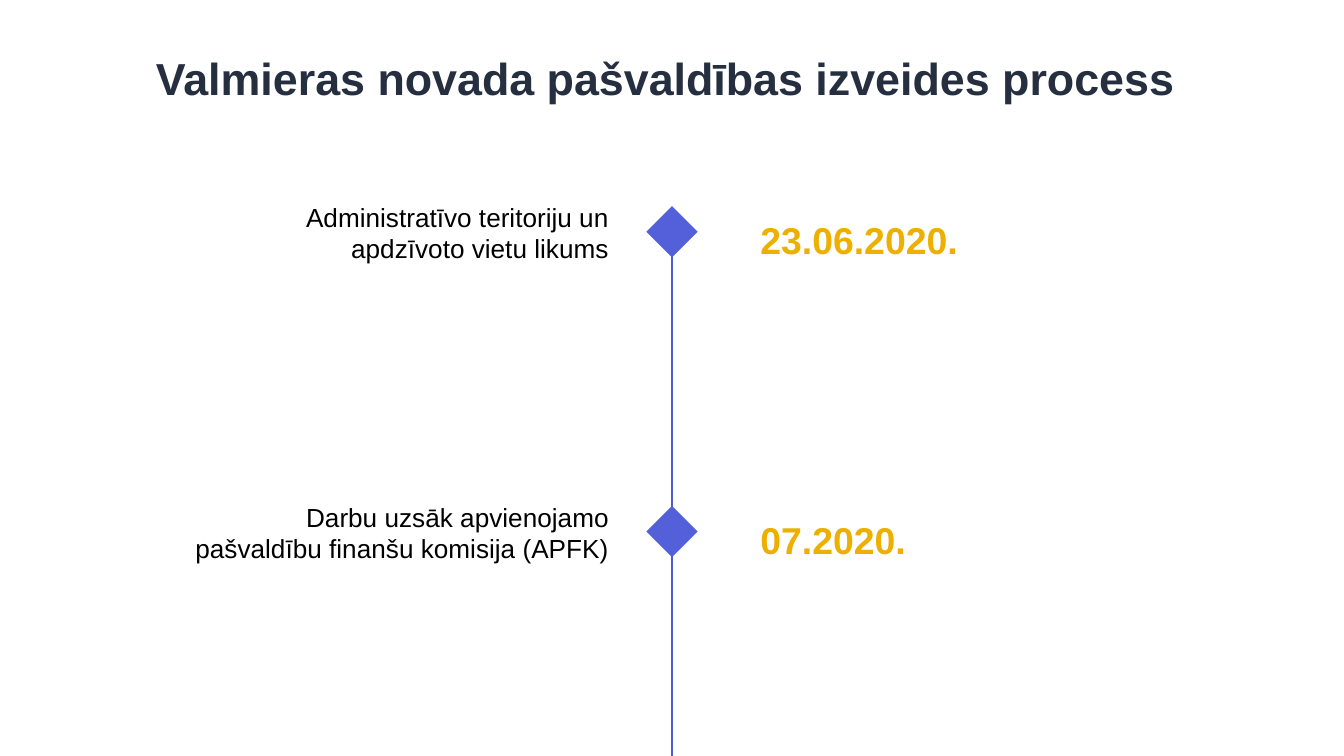
from pptx import Presentation
from pptx.dml.color import RGBColor
from pptx.enum.shapes import MSO_CONNECTOR, MSO_SHAPE
from pptx.enum.text import MSO_ANCHOR, MSO_AUTO_SIZE, PP_ALIGN
from pptx.oxml.ns import qn
from pptx.util import Inches, Pt
from lxml import etree

STRAIGHT = MSO_CONNECTOR.STRAIGHT
RECTANGLE = MSO_SHAPE.RECTANGLE
TOP, MIDDLE = MSO_ANCHOR.TOP, MSO_ANCHOR.MIDDLE
LEFT, RIGHT = PP_ALIGN.LEFT, PP_ALIGN.RIGHT
FIXED = MSO_AUTO_SIZE.NONE

WIDTH = 10
HEIGHT = WIDTH * 9 / 16
AXIS = WIDTH / 2
FIRST_ROW, ROW_HEIGHT = 1.45, 2.23
MARKER_SIZE = 0.27
COLORS = {"title": "252F40", "body": "000000", "date": "EDB000",
          "marker": "5360D9", "line": "4E5BD7"}
FORMATS = {
    "title": {"size": Pt(24), "bold": True},
    "body": {"size": Pt(14), "bold": False},
    "date": {"size": Pt(20), "bold": True},
}
EVENTS = [
    ("Administratīvo teritoriju un apdzīvoto vietu likums", "23.06.2020.", 2.67),
    ("Darbu uzsāk apvienojamo pašvaldību finanšu komisija (APFK)", "07.2020.", 3.41),
]


def color(role):
    """Return the colour of a role."""
    return RGBColor.from_string(COLORS[role])


def write(shape, text, role, alignment=LEFT, anchor=TOP):
    """Fill a shape with one formatted paragraph."""
    frame = shape.text_frame
    frame.text = text
    settings = {"word_wrap": True, "auto_size": FIXED, "vertical_anchor": anchor}
    for name, value in settings.items():
        setattr(frame, name, value)
    paragraph = frame.paragraphs[0]
    paragraph.alignment = alignment
    font = paragraph.runs[0].font
    for name, value in {"name": "Arial", **FORMATS[role]}.items():
        setattr(font, name, value)
    font.color.rgb = color(role)


def place_title(slide, box, text):
    """Move the title placeholder into the box and write it."""
    title = slide.shapes.title
    for name, value in zip(("left", "top", "width", "height"), box):
        setattr(title, name, Inches(value))
    write(title, text, "title", anchor=MIDDLE)


def add_axis(slide, top, bottom):
    """Draw the vertical line of the timeline."""
    line = slide.shapes.add_connector(
        STRAIGHT, *map(Inches, (AXIS, top, AXIS, bottom)))
    line.line.color.rgb = color("line")
    line.line.width = Pt(1.5)
    etree.SubElement(line._element.spPr, qn("a:effectLst"))


def add_event(slide, top, text, date, text_width):
    """Place the marker, description and date of one timeline row."""
    marker = slide.shapes.add_shape(RECTANGLE, *map(Inches, (
        AXIS - MARKER_SIZE / 2, top + 0.14, MARKER_SIZE, MARKER_SIZE)))
    marker.rotation = 45
    marker.shadow.inherit = False
    marker.fill.solid()
    marker.fill.fore_color.rgb = color("marker")
    marker.line.fill.background()

    text_right = AXIS - 0.37
    description = slide.shapes.add_textbox(*map(Inches, (
        text_right - text_width, top, text_width, 0.57)))
    write(description, text, "body", RIGHT)
    date_box = slide.shapes.add_textbox(*map(Inches, (
        AXIS + 0.56, top + 0.12, 2.67, 0.44)))
    write(date_box, date, "date")


def main():
    """Build the timeline slide."""
    presentation = Presentation()
    presentation.slide_width = Inches(WIDTH)
    presentation.slide_height = Inches(HEIGHT)
    slide = presentation.slides.add_slide(presentation.slide_layouts[5])
    place_title(slide, (1.06, 0.33, 7.89, 0.5),
                "Valmieras novada pašvaldības izveides process")
    add_axis(slide, FIRST_ROW + 0.1, 6.04)
    for row, event in enumerate(EVENTS):
        add_event(slide, FIRST_ROW + row * ROW_HEIGHT, *event)
    presentation.save("out.pptx")


if __name__ == "__main__":
    main()
